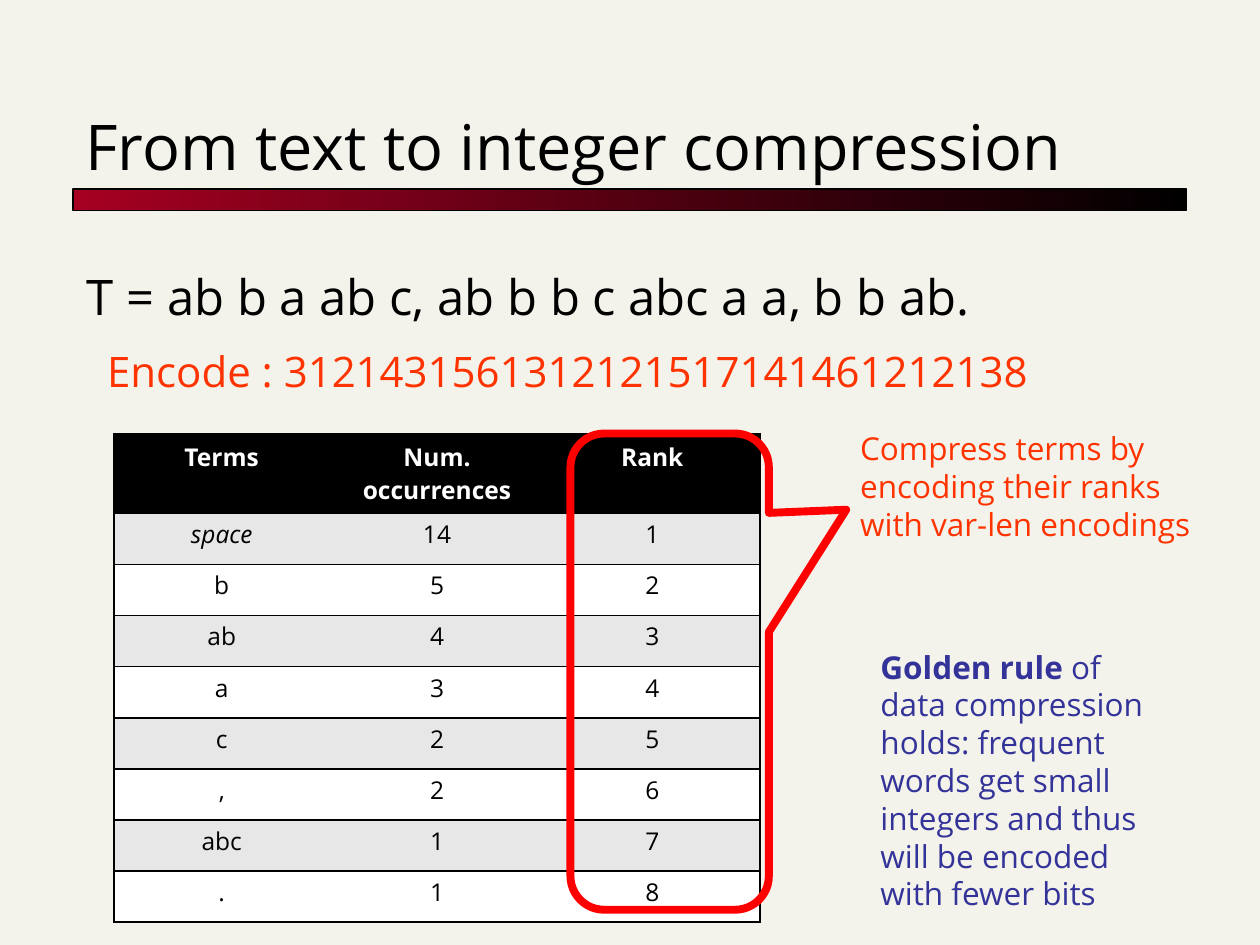
import pptx
import pptx.dml.color
import pptx.enum.shapes
import pptx.enum.text
import pptx.oxml
import pptx.oxml.ns
import pptx.util

Cm = pptx.util.Cm
Pt = pptx.util.Pt
RGBColor = pptx.dml.color.RGBColor
Align = pptx.enum.text.PP_ALIGN
Anchor = pptx.enum.text.MSO_ANCHOR
Shape = pptx.enum.shapes.MSO_SHAPE

FONT = "Open Sans"
CREAM = RGBColor(0xF4, 0xF3, 0xEB)
CRIMSON = RGBColor(0xA5, 0x00, 0x21)
BLACK = RGBColor(0x00, 0x00, 0x00)
WHITE = RGBColor(0xFF, 0xFF, 0xFF)
GRAY = RGBColor(0xE7, 0xE7, 0xE7)
ORANGE = RGBColor(0xFF, 0x33, 0x00)
RED = RGBColor(0xFF, 0x00, 0x00)
BLUE = RGBColor(0x33, 0x33, 0x99)

TITLE = ["From text to integer compression"]
SOURCE_TEXT = ["T = ab b a ab c, ab b b c abc a a, b b ab."]
ENCODED_TEXT = ["Encode : 3121431561312121517141461212138"]
COMPRESS_NOTE = ["Compress terms by", "encoding their ranks", "with var-len encodings"]
GOLDEN_RULE = [
    [("Golden rule ", True), ("of", False)],
    "data compression",
    "holds: frequent",
    "words get small",
    "integers and thus",
    "will be encoded",
    "with fewer bits",
]
HEADER = ("Terms", "Num. occurrences", "Rank")
TERMS = [("space", 14), ("b", 5), ("ab", 4), ("a", 3), ("c", 2), (",", 2), ("abc", 1), (".", 1)]
TERM_ROWS = [(term, str(count), str(rank)) for rank, (term, count) in enumerate(TERMS, 1)]

COLUMN_WIDTH = Cm(4.34)
HEADER_HEIGHT = Cm(1.61)
ROW_HEIGHT = Cm(1.03)


def write_text(frame, lines, size, color, bold=False, italic=False, align=Align.LEFT,
               anchor=Anchor.TOP, line_spacing=None, space_before=None):
    frame.word_wrap = True
    frame.vertical_anchor = anchor
    for index, line in enumerate(lines):
        para = frame.paragraphs[0] if index == 0 else frame.add_paragraph()
        para.alignment = align
        para.line_spacing = line_spacing
        para.space_before = space_before
        for text, is_bold in ([(line, bold)] if isinstance(line, str) else line):
            span = para.add_run()
            span.text = text
            span.font.name = FONT
            span.font.size = Pt(size)
            span.font.color.rgb = color
            span.font.bold = is_bold
            span.font.italic = italic


def add_text(page, place, lines, **style):
    box = page.shapes.add_textbox(*map(Cm, place))
    write_text(box.text_frame, lines, **style)


def set_borders(cell, visible_sides):
    properties = cell._tc.get_or_add_tcPr()
    for index, side in enumerate("LRTB"):
        paint = (f'<a:solidFill><a:srgbClr val="{BLACK}"/></a:solidFill>'
                 if side in visible_sides else "<a:noFill/>")
        border = pptx.oxml.parse_xml(
            f'<a:ln{side} {pptx.oxml.ns.nsdecls("a")} w="{Pt(1)}">{paint}</a:ln{side}>')
        properties.insert(index, border)


def add_rank_table(page):
    rows = [HEADER] + TERM_ROWS
    last_column = len(HEADER) - 1
    table = page.shapes.add_table(
        len(rows), len(HEADER), Cm(2.3), Cm(8.74), COLUMN_WIDTH * len(HEADER),
        HEADER_HEIGHT + ROW_HEIGHT * len(TERM_ROWS)).table
    table.horz_banding = False
    for column in table.columns:
        column.width = COLUMN_WIDTH
    for row_index, values in enumerate(rows):
        is_header = row_index == 0
        table.rows[row_index].height = HEADER_HEIGHT if is_header else ROW_HEIGHT
        for column_index, value in enumerate(values):
            cell = table.cell(row_index, column_index)
            cell.fill.solid()
            cell.fill.fore_color.rgb = BLACK if is_header else GRAY if row_index % 2 else WHITE
            write_text(cell.text_frame, [value], size=14, color=WHITE if is_header else BLACK,
                       bold=is_header, italic=value == "space", align=Align.CENTER,
                       line_spacing=None if is_header else 0.9)
            left = "L" if column_index == 0 else ""
            right = "R" if column_index == last_column else ""
            set_borders(cell, "TB" + left + right)


def add_title_bar(page):
    bar = page.shapes.add_shape(Shape.RECTANGLE, Cm(1.47), Cm(3.81), Cm(22.45), Cm(0.43))
    bar.shadow.inherit = False
    bar.fill.gradient()
    bar.fill.gradient_angle = 0
    for stop, color in zip(bar.fill.gradient_stops, (CRIMSON, BLACK)):
        stop.color.rgb = color
    bar.line.color.rgb = BLACK
    bar.line.width = Pt(0.75)


def add_rank_callout(page):
    callout = page.shapes.add_shape(
        Shape.ROUNDED_RECTANGULAR_CALLOUT, Cm(11.5), Cm(8.74), Cm(4), Cm(9.6))
    callout.shadow.inherit = False
    callout.fill.background()
    callout.line.color.rgb = RED
    callout.line.width = Pt(4.5)
    for index, value in enumerate((0.89, -0.34, 0.17)):
        callout.adjustments[index] = value


def main():
    deck = pptx.Presentation()
    deck.slide_width, deck.slide_height = Cm(25.4), Cm(19.05)
    page = deck.slides.add_slide(deck.slide_layouts[6])
    page.background.fill.solid()
    page.background.fill.fore_color.rgb = CREAM

    add_title_bar(page)
    add_text(page, (1.47, 1.07, 22.43, 2.74), TITLE, size=36, color=BLACK, anchor=Anchor.BOTTOM)
    add_text(page, (1.5, 5.13, 22.4, 1.6), SOURCE_TEXT, size=28, color=BLACK,
             line_spacing=1.1, space_before=Pt(5.6))
    add_rank_table(page)
    add_rank_callout(page)
    add_text(page, (17.09, 8.53, 7.52, 2.57), COMPRESS_NOTE, size=18, color=ORANGE)
    add_text(page, (17.5, 12.93, 6.05, 5.64), GOLDEN_RULE, size=18, color=BLUE)
    add_text(page, (1.91, 6.73, 22.4, 1.6), ENCODED_TEXT, size=24, color=ORANGE,
             line_spacing=1.1, space_before=Pt(4.8))
    deck.save("out.pptx")


if __name__ == "__main__":
    main()
